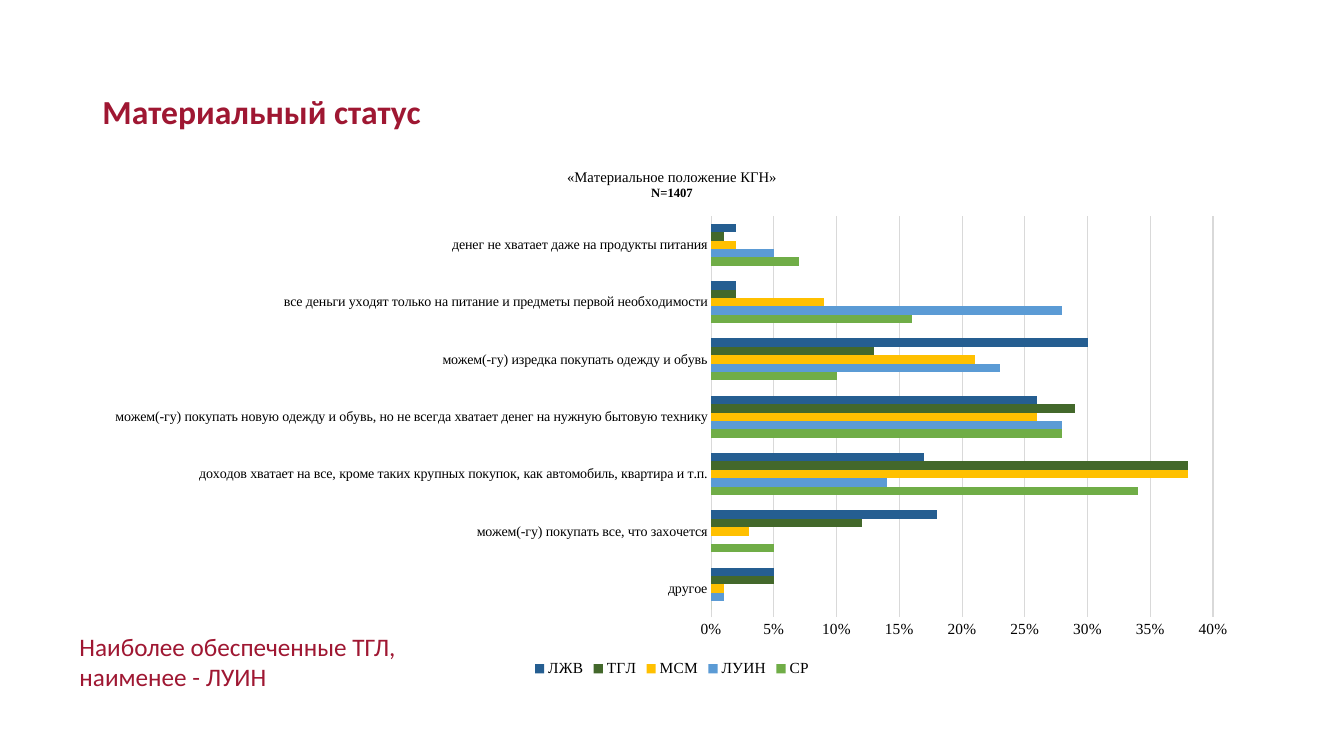
from lxml import etree
from pptx import Presentation
from pptx.chart.data import CategoryChartData
from pptx.dml.color import RGBColor
from pptx.enum.chart import XL_CHART_TYPE, XL_LEGEND_POSITION, XL_TICK_MARK
from pptx.enum.text import MSO_ANCHOR, PP_ALIGN
from pptx.oxml.ns import qn
from pptx.util import Pt

BAR = XL_CHART_TYPE.BAR_CLUSTERED
BOTTOM = XL_LEGEND_POSITION.BOTTOM
NO_TICK = XL_TICK_MARK.NONE
MIDDLE, TOP = MSO_ANCHOR.MIDDLE, MSO_ANCHOR.TOP
LEFT, CENTER = PP_ALIGN.LEFT, PP_ALIGN.CENTER

CRIMSON = RGBColor(0x9F, 0x17, 0x32)
BLACK = RGBColor(0x00, 0x00, 0x00)
GRID = RGBColor(0xD9, 0xD9, 0xD9)
GREEN = RGBColor(0x70, 0xAD, 0x47)
SKY = RGBColor(0x5B, 0x9B, 0xD5)
YELLOW = RGBColor(0xFF, 0xC0, 0x00)
DARK_GREEN = RGBColor(0x43, 0x68, 0x2B)
NAVY = RGBColor(0x25, 0x5E, 0x91)

SANS, SERIF = "Calibri", "Times New Roman"

CATEGORIES = [
    "другое",
    "можем(-гу) покупать все, что захочется",
    "доходов хватает на все, кроме таких крупных покупок, как автомобиль, квартира и т.п.",
    "можем(-гу) покупать новую одежду и обувь, но не всегда хватает денег на нужную бытовую технику",
    "можем(-гу) изредка покупать одежду и обувь",
    "все деньги уходят только на питание и предметы первой необходимости",
    "денег не хватает даже на продукты питания",
]
# Group name, colour, share per category
GROUPS = [
    ("СР", GREEN, [0, 0.05, 0.34, 0.28, 0.1, 0.16, 0.07]),
    ("ЛУИН", SKY, [0.01, 0, 0.14, 0.28, 0.23, 0.28, 0.05]),
    ("МСМ", YELLOW, [0.01, 0.03, 0.38, 0.26, 0.21, 0.09, 0.02]),
    ("ТГЛ", DARK_GREEN, [0.05, 0.12, 0.38, 0.29, 0.13, 0.02, 0.01]),
    ("ЛЖВ", NAVY, [0.05, 0.18, 0.17, 0.26, 0.3, 0.02, 0.02]),
]


def set_font(font, size, name=SERIF, color=BLACK, bold=False):
    font.size, font.name, font.bold = Pt(size), name, bold
    font.color.rgb = color


def write(p, text, align=LEFT, **fmt):
    p.alignment = align
    r = p.add_run()
    r.text = text
    set_font(r.font, **fmt)


def add_title(s, x, y, w, h):
    sp = s.shapes.title
    sp.left, sp.top, sp.width, sp.height = Pt(x), Pt(y), Pt(w), Pt(h)
    tf = sp.text_frame
    tf.vertical_anchor = MIDDLE
    tf.paragraphs[0].line_spacing = 0.9
    write(tf.paragraphs[0], "Материальный статус",
          size=24, name=SANS, color=CRIMSON, bold=True)


def add_conclusion(s, x, y, w, h):
    tf = s.shapes.add_textbox(Pt(x), Pt(y), Pt(w), Pt(h)).text_frame
    tf.word_wrap = True
    tf.vertical_anchor = TOP
    write(tf.paragraphs[0], "Наиболее обеспеченные ТГЛ, наименее - ЛУИН",
          size=18, name=SANS, color=CRIMSON)


def place_plot(chart, **fractions):
    """Fix the inner plot area as fractions of the chart."""
    area = chart.element.find(".//" + qn("c:plotArea"))
    for old in area.findall(qn("c:layout")):
        area.remove(old)
    layout = etree.Element(qn("c:layout"))
    area.insert(0, layout)
    manual = etree.SubElement(layout, qn("c:manualLayout"))
    settings = {"layoutTarget": "inner", "xMode": "edge", "yMode": "edge", **fractions}
    for tag, val in settings.items():
        etree.SubElement(manual, qn("c:" + tag)).set("val", str(val))


def add_income_chart(s, x, y, w, h):
    data = CategoryChartData(number_format="0.00%")
    data.categories = CATEGORIES
    for name, _, shares in GROUPS:
        data.add_series(name, shares)
    chart = s.shapes.add_chart(BAR, Pt(x), Pt(y), Pt(w), Pt(h), data).chart
    set_font(chart.font, 11)

    # Title in two lines
    chart.has_title = True
    tf = chart.chart_title.text_frame
    write(tf.paragraphs[0], "«Материальное положение КГН»", CENTER, size=10.5)
    write(tf.add_paragraph(), "N=1407", CENTER, size=9, bold=True)
    chart.chart_title.include_in_layout = False

    # Bars
    plot = chart.plots[0]
    plot.gap_width, plot.overlap = 182, 0
    plot.vary_by_categories = False
    for series, (_, color, _) in zip(plot.series, GROUPS):
        series.format.fill.solid()
        series.format.fill.fore_color.rgb = color
        series.invert_if_negative = False

    # Axes
    cat, val = chart.category_axis, chart.value_axis
    for axis, size in ((cat, 10), (val, 11)):
        axis.major_tick_mark = axis.minor_tick_mark = NO_TICK
        set_font(axis.tick_labels.font, size)
    val.minimum_scale, val.maximum_scale, val.major_unit = 0, 0.4, 0.05
    val.tick_labels.number_format = "0%"
    val.tick_labels.number_format_is_linked = False
    val.format.line.fill.background()
    val.has_major_gridlines = True
    for line in (cat.format.line, val.major_gridlines.format.line):
        line.color.rgb, line.width = GRID, Pt(0.75)

    # Legend
    chart.has_legend = True
    chart.legend.position = BOTTOM
    chart.legend.include_in_layout = False
    set_font(chart.legend.font, 11)

    # Plot area, in points from the chart's corner
    place_plot(chart, x=442 / w, y=48 / h, w=358.5 / w, h=286.5 / h)


def main():
    prs = Presentation()
    prs.slide_width, prs.slide_height = Pt(960), Pt(540)
    s = prs.slides.add_slide(prs.slide_layouts[5])
    add_title(s, 66, 29, 828, 104)
    add_income_chart(s, 66, 106.5, 828, 380)
    add_conclusion(s, 49.7, 447.5, 264, 51)
    prs.save("out.pptx")


if __name__ == "__main__":
    main()
